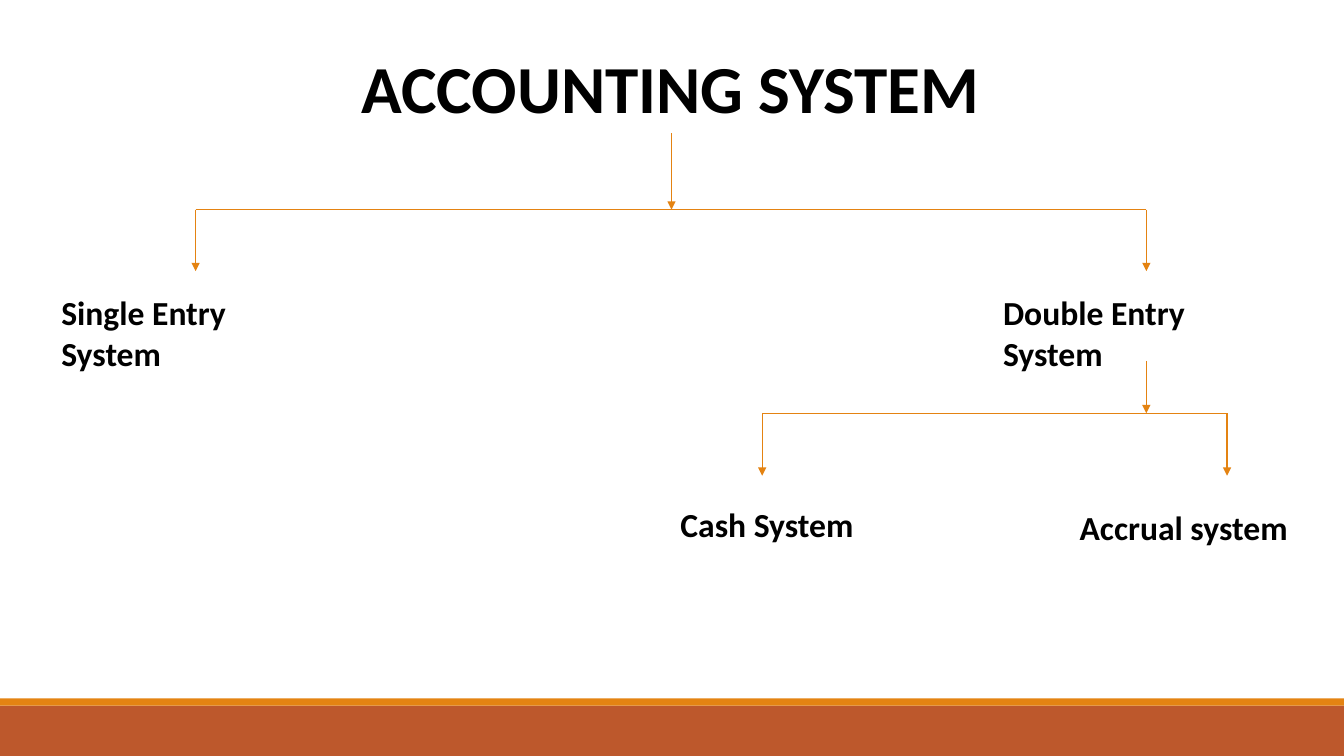
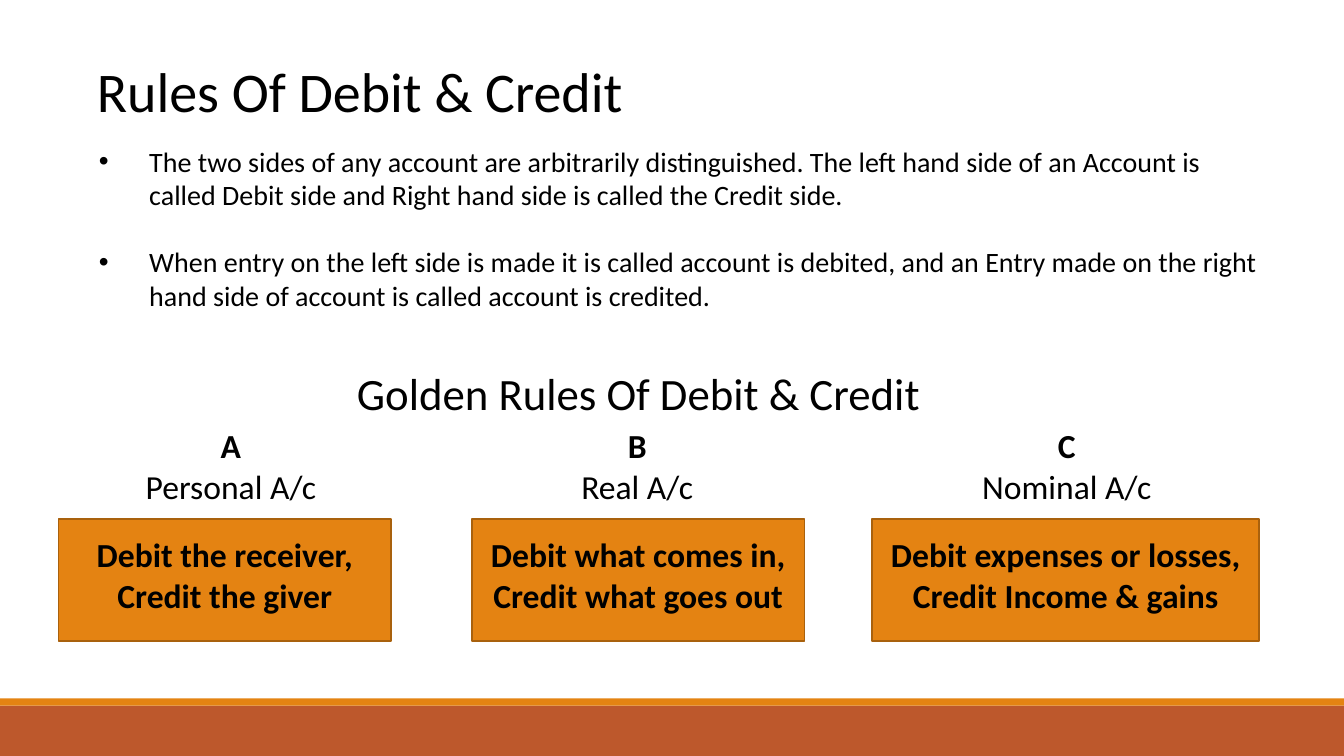
from lxml import etree
from pptx import Presentation
from pptx.dml.color import RGBColor
from pptx.enum.shapes import MSO_CONNECTOR, MSO_SHAPE
from pptx.enum.text import MSO_ANCHOR, MSO_AUTO_SIZE, PP_ALIGN
from pptx.oxml.ns import qn
from pptx.util import Emu, Pt

PX = 9144  # 100 px to the inch
WIDTH, HEIGHT = 1333, 750
FONT = "Calibri"
BLACK, ORANGE, RUST, BROWN = "000000", "E48312", "BD582C", "A9610D"
LEFT, CENTER = PP_ALIGN.LEFT, PP_ALIGN.CENTER
RECTANGLE, STRAIGHT = MSO_SHAPE.RECTANGLE, MSO_CONNECTOR.STRAIGHT
TOP, NO_AUTOFIT = MSO_ANCHOR.TOP, MSO_AUTO_SIZE.NONE
TITLE_AND_CONTENT, TITLE_ONLY = 1, 5


def px(*lengths):
    return [Emu(length * PX) for length in lengths]


def write_text(shape, lines, box=None, size=24, bold_lines=0, align=LEFT, top=5, gap=0):
    """Fill a shape with one paragraph per line; the first bold_lines are bold."""
    if box:
        shape.left, shape.top, shape.width, shape.height = px(*box)
    frame = shape.text_frame
    frame.word_wrap, frame.auto_size, frame.vertical_anchor = True, NO_AUTOFIT, TOP
    frame.margin_left, frame.margin_right, frame.margin_top = px(10, 10, top)
    frame.text = "\n".join(lines)
    for index, paragraph in enumerate(frame.paragraphs):
        paragraph.alignment = align
        paragraph.space_before = Pt(gap if index else 0)
        font = paragraph.runs[0].font
        font.name, font.size, font.bold = FONT, Pt(size), index < bold_lines
        font.color.rgb = RGBColor.from_string(BLACK)


presentation = Presentation()
presentation.slide_width, presentation.slide_height = px(WIDTH, HEIGHT)
system_slide, rules_slide = [
    presentation.slides.add_slide(presentation.slide_layouts[layout])
    for layout in (TITLE_ONLY, TITLE_AND_CONTENT)
]

# Footer bands, moved to the master so that every slide shows them
master_tree = presentation.slide_master.element.cSld.spTree
for index, (top, height, color) in enumerate([(700, 50, RUST), (693, 7, ORANGE)]):
    band = system_slide.shapes.add_shape(RECTANGLE, *px(0, top, WIDTH, height))
    band.shadow.inherit = False
    band.fill.solid()
    band.fill.fore_color.rgb = RGBColor.from_string(color)
    band.line.fill.background()
    band.element.nvSpPr.cNvPr.set("id", str(100 + index))
    master_tree.insert(2 + index, band.element)

# Slide 1: tree of accounting systems
shapes = system_slide.shapes
write_text(shapes.title, ["ACCOUNTING SYSTEM"], (30, 41, 1270, 91),
           size=48, bold_lines=1, align=CENTER)

tree_lines = [  # from x, y, to x, y, arrowhead
    (666, 132, 666, 208, True),
    (194, 208, 1137, 208, False),
    (194, 208, 194, 269, True),
    (1137, 208, 1137, 269, True),
    (1137, 358, 1137, 410, True),
    (756, 410, 1217, 410, False),
    (756, 410, 756, 472, True),
    (1217, 410, 1217, 472, True),
]
for *ends, arrow in tree_lines:
    connector = shapes.add_connector(STRAIGHT, *px(*ends))
    connector.line.width = Pt(1)
    connector.line.color.rgb = RGBColor.from_string(ORANGE)
    if arrow:
        etree.SubElement(connector.line._get_or_add_ln(), qn("a:tailEnd"), type="triangle")
    etree.SubElement(connector.element.spPr, qn("a:effectLst"))

tree_labels = [
    ("Single Entry System", (51, 285, 285, 91)),
    ("Double Entry System", (985, 285, 303, 91)),
    ("Cash System", (665, 495, 248, 50)),
    ("Accrual system", (1061, 498, 227, 50)),
]
for label, box in tree_labels:
    write_text(shapes.add_textbox(*px(*box)), [label], bold_lines=1)

# Slide 2: title and explanation
shapes = rules_slide.shapes
write_text(shapes.title, ["Rules Of Debit & Credit"], (86, 51, 1013, 77), size=40)

body = rules_slide.placeholders[1]
write_text(body, [
    "The two sides of any account are arbitrarily distinguished. The left hand side "
    "of an Account is called Debit side and Right hand side is called the Credit side.",
    "When entry on the left side is made it is called account is debited, and an Entry "
    "made on the right hand side of account is called account is credited.",
], (88, 138, 1170, 178), size=20, gap=24)
for paragraph in body.text_frame.paragraphs:
    properties = paragraph._p.get_or_add_pPr()
    properties.set("marL", str(50 * PX))
    properties.set("indent", str(-50 * PX))

# Golden rules: a heading, then a letter, an account and a rule per column
write_text(shapes.add_textbox(*px(127, 358, 1013, 64)),
           ["Golden Rules Of Debit & Credit"], size=32, align=CENTER)

golden_rules = [  # heading left, box left, box width, heading, rule
    (125, 58, 330, ["A", "Personal A/c"], ["Debit the receiver,", "Credit the giver"]),
    (528, 468, 330, ["B", "Real A/c"], ["Debit what comes in,", "Credit what goes out"]),
    (954, 865, 384, ["C", "Nominal A/c"],
     ["Debit expenses or losses,", "Credit Income & gains"]),
]
for heading_left, box_left, box_width, heading, rule in golden_rules:
    write_text(shapes.add_textbox(*px(heading_left, 417, 208, 91)), heading,
               bold_lines=1, align=CENTER)
    rule_box = shapes.add_shape(RECTANGLE, *px(box_left, 515, box_width, 121))
    rule_box.shadow.inherit = False
    rule_box.fill.solid()
    rule_box.fill.fore_color.rgb = RGBColor.from_string(ORANGE)
    rule_box.line.color.rgb = RGBColor.from_string(BROWN)
    rule_box.line.width = Pt(1.25)
    write_text(rule_box, rule, bold_lines=2, align=CENTER, top=15)

presentation.save("out.pptx")
